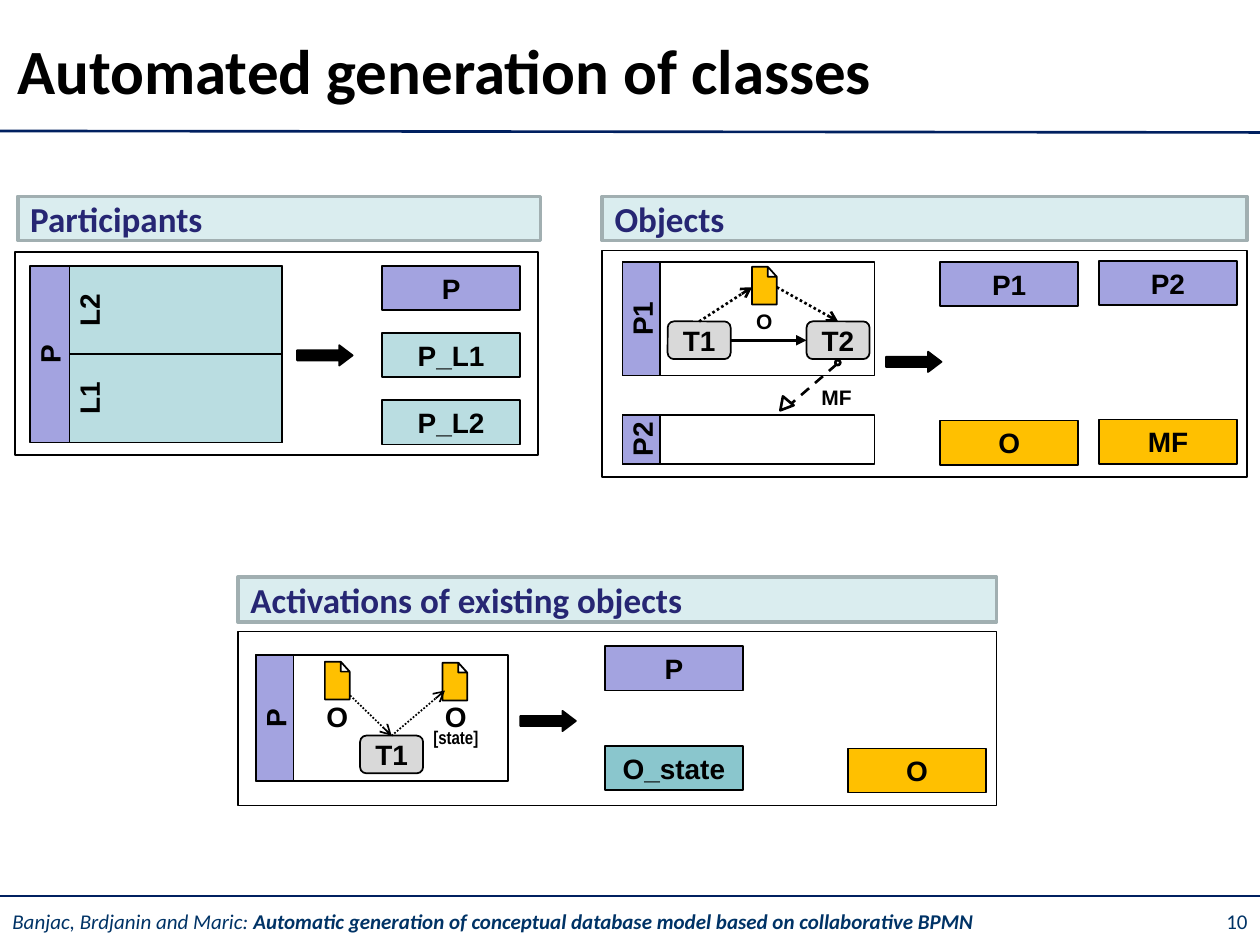
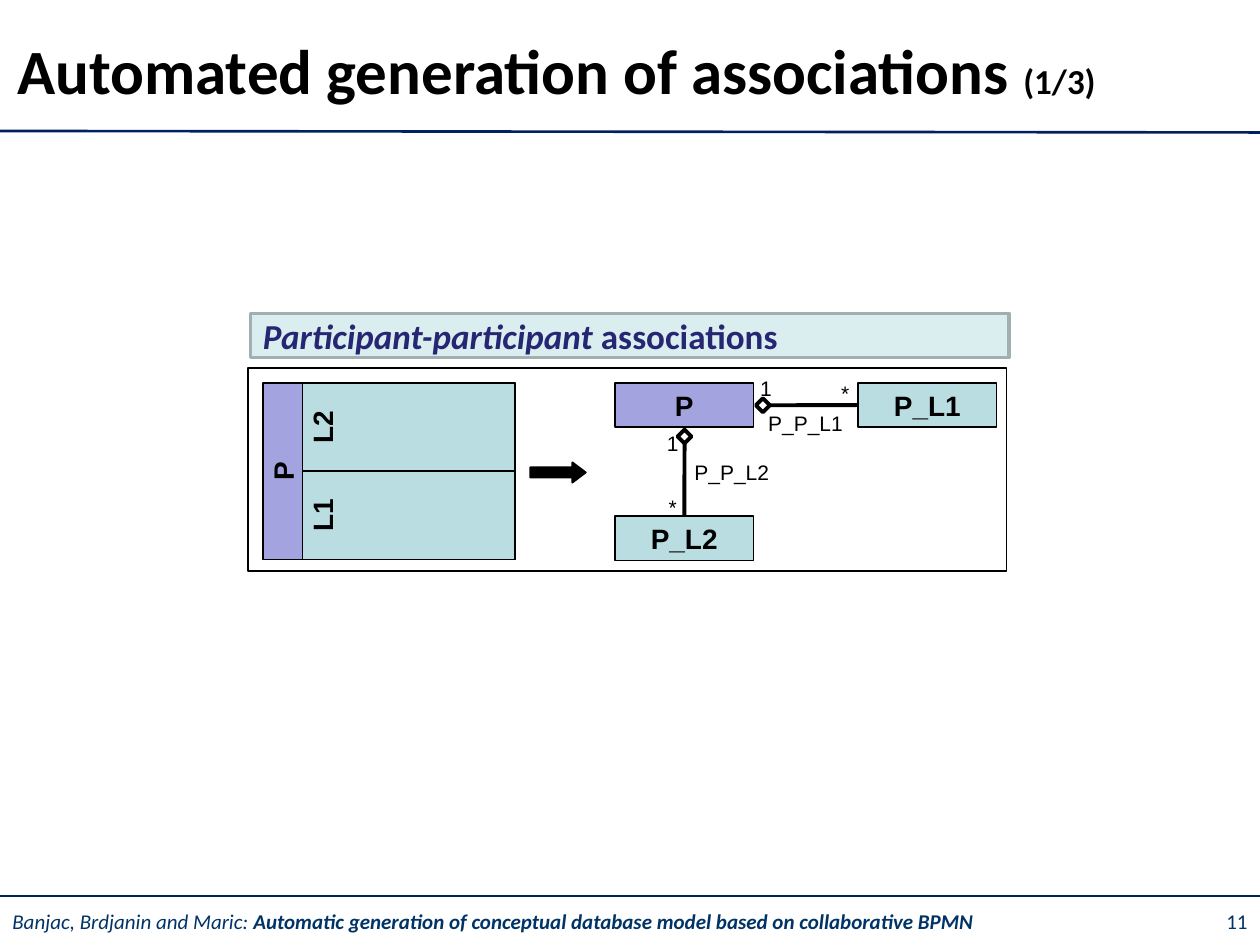
from lxml import etree
from pptx import Presentation
from pptx.dml.color import RGBColor
from pptx.enum.dml import MSO_LINE
from pptx.enum.shapes import MSO_CONNECTOR, MSO_SHAPE
from pptx.enum.text import MSO_ANCHOR, PP_ALIGN
from pptx.oxml.ns import qn
from pptx.util import Cm, Pt

RECT, ROUNDED = MSO_SHAPE.RECTANGLE, MSO_SHAPE.ROUNDED_RECTANGLE
ARROW, DIAMOND = MSO_SHAPE.RIGHT_ARROW, MSO_SHAPE.DIAMOND
TRIANGLE, OVAL = MSO_SHAPE.ISOSCELES_TRIANGLE, MSO_SHAPE.OVAL
STRAIGHT = MSO_CONNECTOR.STRAIGHT
DOTTED, DASHED = MSO_LINE.ROUND_DOT, MSO_LINE.DASH
TOP, MIDDLE = MSO_ANCHOR.TOP, MSO_ANCHOR.MIDDLE
LEFT, CENTER, RIGHT = PP_ALIGN.LEFT, PP_ALIGN.CENTER, PP_ALIGN.RIGHT
SITE_TOP, SITE_LEFT, SITE_BOTTOM, SITE_RIGHT = range(4)

BLACK, WHITE, NAVY, FOOTER_INK = "000000", "FFFFFF", "002060", "003366"
BANNER_FILL, BANNER_EDGE, BANNER_INK = "DAEDEF", "A1AFB1", "262673"
VIOLET, AQUA, TEAL, AMBER, GREY = "A3A3E0", "BADDE1", "8AC6CD", "FFC000", "D9D9D9"

PAGE_W, PAGE_H = 25.4, 19.05
CLASS_SIZE = (2.79, 0.89)
TASK_SIZE = (1.27, 0.76)
ARROW_SIZE = (1.12, 0.41)
DIAMOND_SIZE = (0.28, 0.28)
HEADER_W = 0.76
LANE_X, LANE_SIZE = 0.79, (4.29, 1.78)
DOCUMENT_OUTLINE = [(0, 0), (0.32, 0), (0.32, 0.2), (0.5, 0.2),
                    (0.32, 0), (0.5, 0.2), (0.5, 0.76)]
NO_INSETS, POOL_INSETS = (0, 0, 0, 0), (0.05, 0, 0, 0)

FOOTER = [("Banjac, Brdjanin and Maric: ", {"italic": True}),
          ("Automatic generation of conceptual database model based on "
           "collaborative BPMN", {"italic": True, "bold": True})]

PARTICIPANTS = {
    "banner": (0.36, 3.96, 10.54, 0.89),
    "heading": [("Participants", {})],
    "frame": (0.3, 5.08, 10.54, 4.09),
    "laned_pool": (0.61, 5.36),
    "arrow": (5.99, 6.96),
    "classes": [("P", 7.7, 5.36, VIOLET), ("P_L1", 7.7, 6.71, AQUA),
                ("P_L2", 7.7, 8.07, AQUA)],
}
OBJECTS = {
    "banner": (12.14, 3.96, 13, 0.89),
    "heading": [("Objects", {})],
    "frame": (12.14, 5.05, 13, 4.57),
    "arrow": (17.86, 7.09),
    "classes": [("P1", 18.95, 5.28, VIOLET), ("P2", 22.15, 5.26, VIOLET),
                ("O", 18.95, 8.48, AMBER), ("MF", 22.15, 8.46, AMBER)],
    "pools": [("P1", 12.55, 5.28, 5.08, 2.29), ("P2", 12.55, 8.36, 5.08, 0.99)],
    "documents": [(15.16, 5.38)],
    "tasks": [("T1", 13.46, 6.48), ("T2", 16.26, 6.48)],
    "links": [(("T1", SITE_RIGHT), ("T2", SITE_LEFT), 1.5, None, "triangle"),
              (("T1", SITE_TOP), (15.16, 5.79), 1.5, DOTTED, "arrow"),
              ((15.66, 5.79), ("T2", SITE_TOP), 1.5, DOTTED, "arrow"),
              ((16.87, 7.34), (15.9, 8.18), 1.5, DASHED, None)],
    "message_ends": [(TRIANGLE, (15.67, 8.05, 0.28, 0.25), 220),
                     (OVAL, (16.84, 7.26, 0.1, 0.1), 0)],
    "labels": [([("O", {"size": 12, "bold": True})], (15.16, 6.25, 0.5, 0.43), CENTER),
               ([("MF", {"size": 12, "bold": True})], (16.56, 7.8, 1.4, 0.43), LEFT)],
}
ACTIVATIONS = {
    "banner": (4.8, 11.63, 15.29, 0.91),
    "heading": [("Activations of existing objects", {})],
    "frame": (4.8, 12.73, 15.29, 3.51),
    "arrow": (10.49, 14.33),
    "classes": [("P", 12.19, 13.03, VIOLET), ("O_state", 12.19, 15.04, TEAL),
                ("O", 17.09, 15.09, AMBER)],
    "pools": [("P", 5.16, 13.21, 5.08, 2.54)],
    "documents": [(6.55, 13.34), (8.92, 13.36)],
    "tasks": [("T1", 7.26, 14.83)],
    "links": [(("T1", SITE_TOP), (8.97, 13.92), 1, DOTTED, "arrow"),
              ((7.06, 14.02), ("T1", SITE_TOP), 1, DOTTED, "arrow")],
    "labels": [([("O", {"size": 16, "bold": True})], (6.55, 14.22, 0.5, 0.43), CENTER),
               ([("O", {"size": 16, "bold": True})], (8.94, 14.22, 0.5, 0.43), CENTER),
               ([(" ", {"size": 10.5, "bold": True}),
                 ("[state]", {"size": 10.5, "bold": True, "font": "Arial Narrow"})],
                (8.2, 14.68, 1.88, 0.36), CENTER)],
}
ASSOCIATIONS = {
    "banner": (5.05, 6.32, 15.29, 0.89),
    "heading": [("Participant-participant ", {"italic": True}), ("associations", {})],
    "frame": (5, 7.42, 15.29, 4.09),
    "laned_pool": (5.31, 7.72),
    "arrow": (10.69, 9.32),
    "classes": [("P", 12.4, 7.72, VIOLET), ("P_L1", 17.3, 7.72, AQUA),
                ("P_L2", 12.4, 10.41, AQUA)],
    "diamonds": [("to P_L1", 15.24, 8.03), ("to P_L2", 13.66, 8.66)],
    "links": [(("to P_L1", SITE_RIGHT), ("P_L1", SITE_LEFT), 2.25, None, None),
              (("to P_L2", SITE_BOTTOM), ("P_L2", SITE_TOP), 2.25, None, None)],
    "labels": [([(text, {"size": 12})], place, align) for text, place, align in [
        ("1", (15.19, 7.62, 0.5, 0.4), CENTER),
        ("*", (16.79, 7.72, 0.5, 0.4), CENTER),
        ("P_P_L1", (15.19, 8.33, 2.1, 0.4), CENTER),
        ("1", (13.31, 8.74, 0.5, 0.4), CENTER),
        ("*", (13.31, 10.03, 0.5, 0.4), CENTER),
        ("P_P_L2", (14, 9.32, 2.1, 0.4), LEFT)]],
}
PAGES = [
    ("10", [("Automated generation of classes", {})],
     [PARTICIPANTS, OBJECTS, ACTIVATIONS]),
    ("11", [("Automated generation of associations ", {}), ("(1/3)", {"size": 20})],
     [ASSOCIATIONS]),
]


def rgb(color):
    return RGBColor.from_string(color)


def write(box, runs, align=LEFT, anchor=MIDDLE, insets=None, **defaults):
    frame = box.text_frame
    frame.word_wrap = True
    frame.vertical_anchor = anchor
    if insets:
        (frame.margin_left, frame.margin_top,
         frame.margin_right, frame.margin_bottom) = map(Cm, insets)
    para = frame.paragraphs[0]
    para.alignment = align
    for text, changes in runs:
        style = {"font": "Arial", "size": 16, "color": BLACK, **defaults, **changes}
        span = para.add_run()
        span.text = text
        span.font.name = style["font"]
        span.font.size = Pt(style["size"])
        span.font.bold = style.get("bold", False)
        span.font.italic = style.get("italic", False)
        span.font.color.rgb = rgb(style["color"])


def paint(box, fill, edge=BLACK, weight=1):
    box.shadow.inherit = False
    if fill:
        box.fill.solid()
        box.fill.fore_color.rgb = rgb(fill)
    else:
        box.fill.background()
    box.line.color.rgb = rgb(edge)
    box.line.width = Pt(weight)


def add_box(page, kind, place, fill=None, edge=BLACK, weight=1):
    box = page.shapes.add_shape(kind, *map(Cm, place))
    paint(box, fill, edge, weight)
    return box


def add_text(page, runs, place, **style):
    write(page.shapes.add_textbox(*map(Cm, place)), runs, **style)


def add_named_box(page, kind, name, place, fill):
    box = add_box(page, kind, place, fill)
    write(box, [(name, {})], CENTER, insets=NO_INSETS, bold=True)
    return box


def add_upright_box(page, name, place, fill):
    box = add_box(page, RECT, place, fill)
    write(box, [(name, {})], CENTER, TOP, POOL_INSETS, bold=True)
    box.element.txBody.bodyPr.set("vert", "vert270")


def add_laned_pool(page, x, y):
    width, height = LANE_SIZE
    add_upright_box(page, "P", (x, y, LANE_X + width, 2 * height), VIOLET)
    for row, name in enumerate(["L2", "L1"]):
        add_upright_box(page, name, (x + LANE_X, y + row * height, width, height), AQUA)


def add_document(page, x, y):
    points = [(Cm(x + dx), Cm(y + dy)) for dx, dy in DOCUMENT_OUTLINE]
    builder = page.shapes.build_freeform(Cm(x), Cm(y + 0.76))
    builder.add_line_segments(points, close=True)
    paint(builder.convert_to_shape(), AMBER)


def add_line(page, start, end, weight, dash=None, head=None, color=BLACK, boxes=None):
    joined_start, joined_end = (isinstance(point[0], str) for point in (start, end))
    first = (0, 0) if joined_start else start
    last = (0, 0) if joined_end else end
    line = page.shapes.add_connector(STRAIGHT, *map(Cm, first + last))
    if joined_start:
        line.begin_connect(boxes[start[0]], start[1])
    if joined_end:
        line.end_connect(boxes[end[0]], end[1])
    line.line.color.rgb = rgb(color)
    line.line.width = Pt(weight)
    if dash:
        line.line.dash_style = dash
    properties = line.element.spPr
    if head:
        etree.SubElement(properties.find(qn("a:ln")), qn("a:tailEnd"), type=head)
    etree.SubElement(properties, qn("a:effectLst"))


def add_panel(page, panel):
    banner = add_box(page, RECT, panel["banner"], BANNER_FILL, BANNER_EDGE, 2)
    write(banner, panel["heading"], font="Calibri", size=20, color=BANNER_INK, bold=True)
    add_box(page, RECT, panel["frame"])
    arrow = add_box(page, ARROW, panel["arrow"] + ARROW_SIZE, BLACK)
    arrow.adjustments[1] = 0.66
    if "laned_pool" in panel:
        add_laned_pool(page, *panel["laned_pool"])
    for name, x, y, width, height in panel.get("pools", []):
        add_box(page, RECT, (x, y, width, height), WHITE)
        add_upright_box(page, name, (x, y, HEADER_W, height), VIOLET)
    boxes = {}
    for name, x, y, fill in panel["classes"]:
        boxes[name] = add_named_box(page, RECT, name, (x, y) + CLASS_SIZE, fill)
    for name, x, y in panel.get("tasks", []):
        boxes[name] = add_named_box(page, ROUNDED, name, (x, y) + TASK_SIZE, GREY)
    for name, x, y in panel.get("diamonds", []):
        boxes[name] = add_box(page, DIAMOND, (x, y) + DIAMOND_SIZE, WHITE, weight=2.25)
    for corner in panel.get("documents", []):
        add_document(page, *corner)
    for link in panel.get("links", []):
        add_line(page, *link, boxes=boxes)
    for kind, place, angle in panel.get("message_ends", []):
        add_box(page, kind, place, WHITE, weight=1.5).rotation = angle
    for runs, place, align in panel.get("labels", []):
        add_text(page, runs, place, align=align, insets=NO_INSETS)


def add_page(deck, number, title, panels):
    page = deck.slides.add_slide(deck.slide_layouts[6])
    add_line(page, (0, 2.64), (PAGE_W, 2.67), 1.5, color=NAVY)
    add_line(page, (0, 18.06), (PAGE_W, 18.06), 1.5, color=NAVY)
    add_text(page, title, (0.1, 0.41, 24.8, 1.98), font="Calibri", size=36, bold=True)
    small = {"font": "Calibri", "size": 12, "color": FOOTER_INK}
    add_text(page, FOOTER, (0, 18.08, 24.2, 0.97), **small)
    add_text(page, [(number, {})], (24.2, 18.08, 1.2, 0.97), align=RIGHT, **small)
    for panel in panels:
        add_panel(page, panel)


def main():
    deck = Presentation()
    deck.slide_width, deck.slide_height = Cm(PAGE_W), Cm(PAGE_H)
    for number, title, panels in PAGES:
        add_page(deck, number, title, panels)
    deck.save("out.pptx")


if __name__ == "__main__":
    main()
